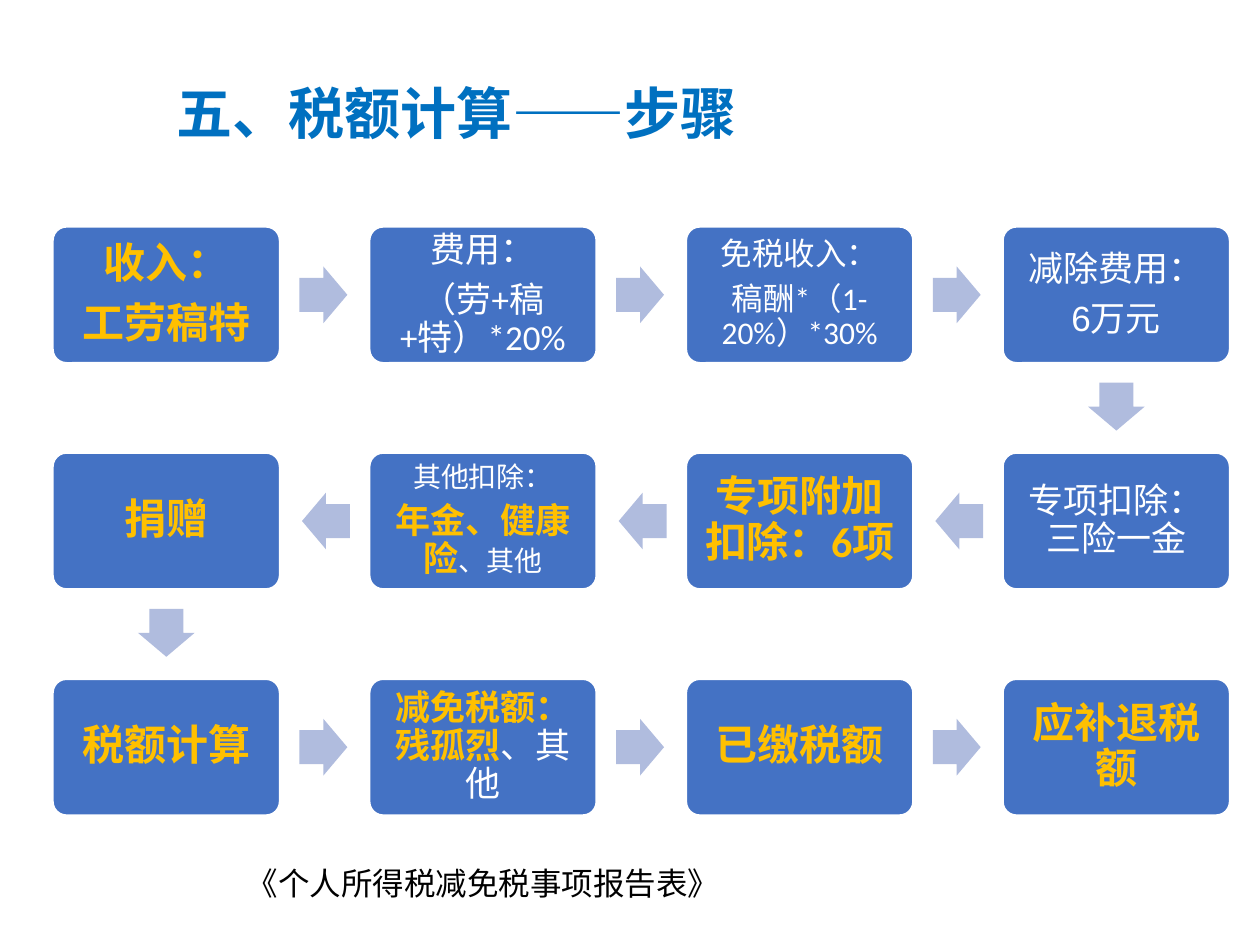
from itertools import pairwise
from typing import NamedTuple

from lxml.etree import SubElement
from pptx import Presentation
from pptx.dml.color import RGBColor
from pptx.enum.shapes import MSO_SHAPE as Preset
from pptx.enum.text import MSO_ANCHOR as Anchor, MSO_AUTO_SIZE as AutoSize, PP_ALIGN as Align
from pptx.oxml.ns import qn
from pptx.util import Inches, Pt

WHITE, GOLD, BLUE, PALE = "FFFFFF", "FFC000", "4472C4", "B0BCDE"
CJK = "Noto Sans CJK SC"
COLUMNS, ROWS = 4, 3
GRID_LEFT, GRID_TOP = 0.42, 1.8
COLUMN_STEP, ROW_STEP = (7.96 - GRID_LEFT) / (COLUMNS - 1), (5.39 - GRID_TOP) / (ROWS - 1)
BOX_WIDTH, BOX_HEIGHT = 1.8, 1.08
ARROW_LENGTH, ARROW_WIDTH, ARROW_LAG = 0.38, 0.45, 0.01


class Run(NamedTuple):
    text: str
    size: int = 24
    color: str = GOLD
    bold: bool = True
    font: str = "Calibri"


class Step(NamedTuple):
    paragraphs: list[list[Run]]
    inset: float = 0.1


class Cell(NamedTuple):
    column: int
    row: int

    def center(self) -> tuple[float, float]:
        return (GRID_LEFT + self.column * COLUMN_STEP + BOX_WIDTH / 2,
                GRID_TOP + self.row * ROW_STEP + BOX_HEIGHT / 2)


def plain(text: str, size: int = 20, font: str = "Calibri") -> Run:
    return Run(text, size, WHITE, False, font)


STEPS = [
    Step([[Run("收入：")], [Run("工劳稿特")]]),
    Step([[plain("费用：")], [plain("（劳+稿+特）*20%")]], 0.08),
    Step([[plain("免税收入：", 18)], [plain("稿酬*（1-20%）*30%", 18)]], 0.07),
    Step([[plain("减除费用：", font="Arial")], [plain("6万元", font="Arial")]], 0.08),
    Step([[plain("专项扣除：三险一金", font=CJK)]], 0.08),
    Step([[Run("专项附加扣除：6项")]]),
    Step([[plain("其他扣除：", 16)], [Run("年金、健康险", 20), plain("、其他", 16)]], 0.07),
    Step([[Run("捐赠")]]),
    Step([[Run("税额计算")]]),
    Step([[Run("减免税额：残孤烈", 20), plain("、其他")]], 0.08),
    Step([[Run("已缴税额")]]),
    Step([[Run("应补退税额")]]),
]


def rgb(color: str) -> RGBColor:
    return RGBColor.from_string(color)


def write(frame, paragraphs: list[list[Run]], *, align=None, spacing=None,
          after_percent: int = 0, anchor=Anchor.TOP, wrap: bool = True) -> None:
    frame.word_wrap = wrap
    frame.vertical_anchor = anchor
    for index, runs in enumerate(paragraphs):
        paragraph = frame.add_paragraph() if index else frame.paragraphs[0]
        paragraph.alignment = align
        paragraph.line_spacing = spacing
        if after_percent:
            after = SubElement(paragraph._p.get_or_add_pPr(), qn("a:spcAft"))
            SubElement(after, qn("a:spcPct"), val=str(after_percent * 1000))
        for item in runs:
            run = paragraph.add_run()
            run.text = item.text
            run.font.size = Pt(item.size)
            run.font.bold = item.bold
            run.font.name = item.font
            run.font.color.rgb = rgb(item.color)
            SubElement(run.font._element, qn("a:ea"), typeface=CJK)


def add_preset(slide, preset, center: tuple[float, float], width: float, height: float,
               *, fill: str | None = None, outline: str | None = None,
               adjustments: tuple[float, ...] = ()):
    x, y = center
    shape = slide.shapes.add_shape(preset, Inches(x - width / 2), Inches(y - height / 2),
                                   Inches(width), Inches(height))
    shape.shadow.inherit = False
    for index, value in enumerate(adjustments):
        shape.adjustments[index] = value
    if fill:
        shape.fill.solid()
        shape.fill.fore_color.rgb = rgb(fill)
    else:
        shape.fill.background()
    if outline:
        shape.line.color.rgb = rgb(outline)
        shape.line.width = Pt(1)
    else:
        shape.line.fill.background()
    return shape


def add_step(slide, cell: Cell, step: Step) -> None:
    box = add_preset(slide, Preset.ROUNDED_RECTANGLE, cell.center(), BOX_WIDTH, BOX_HEIGHT,
                     fill=BLUE, outline=WHITE, adjustments=(0.1,))
    frame = box.text_frame
    frame.margin_left = frame.margin_right = Inches(step.inset)
    frame.margin_top = frame.margin_bottom = Inches(step.inset)
    write(frame, step.paragraphs, align=Align.CENTER, spacing=0.9,
          after_percent=35, anchor=Anchor.MIDDLE)


def add_flow_arrow(slide, start: Cell, end: Cell) -> None:
    (x1, y1), (x2, y2) = start.center(), end.center()
    across, down = end.column - start.column, end.row - start.row
    middle = ((x1 + x2) / 2 - across * ARROW_LAG, (y1 + y2) / 2 - down * ARROW_LAG)
    arrow = add_preset(slide, Preset.RIGHT_ARROW, middle, ARROW_LENGTH, ARROW_WIDTH,
                       fill=PALE, adjustments=(0.6, 0.5))
    arrow.rotation = 90 if down else 180 if across < 0 else 0


def main() -> None:
    deck = Presentation()
    deck.slide_width, deck.slide_height = Inches(10), Inches(7.5)
    slide = deck.slides.add_slide(deck.slide_layouts[6])

    cells = [Cell(COLUMNS - 1 - column if row % 2 else column, row)
             for row in range(ROWS) for column in range(COLUMNS)]
    for cell, step in zip(cells, STEPS):
        add_step(slide, cell, step)
    for start, end in pairwise(cells):
        add_flow_arrow(slide, start, end)

    heading = add_preset(slide, Preset.ROUNDED_RECTANGLE, (5.22, 0.755), 7.84, 0.61,
                         adjustments=(0,))
    write(heading.text_frame, [[Run("五、税额计算——步骤", 32, "0070C0", True, CJK)]],
          align=Align.LEFT, spacing=1.5, anchor=Anchor.MIDDLE)

    report = slide.shapes.add_textbox(Inches(1.86), Inches(6.81), Inches(3.99), Inches(0.4))
    write(report.text_frame, [[Run("《个人所得税减免税事项报告表》", 18, "000000", False)]], wrap=False)
    report.text_frame.auto_size = AutoSize.SHAPE_TO_FIT_TEXT

    deck.save("out.pptx")


if __name__ == "__main__":
    main()
